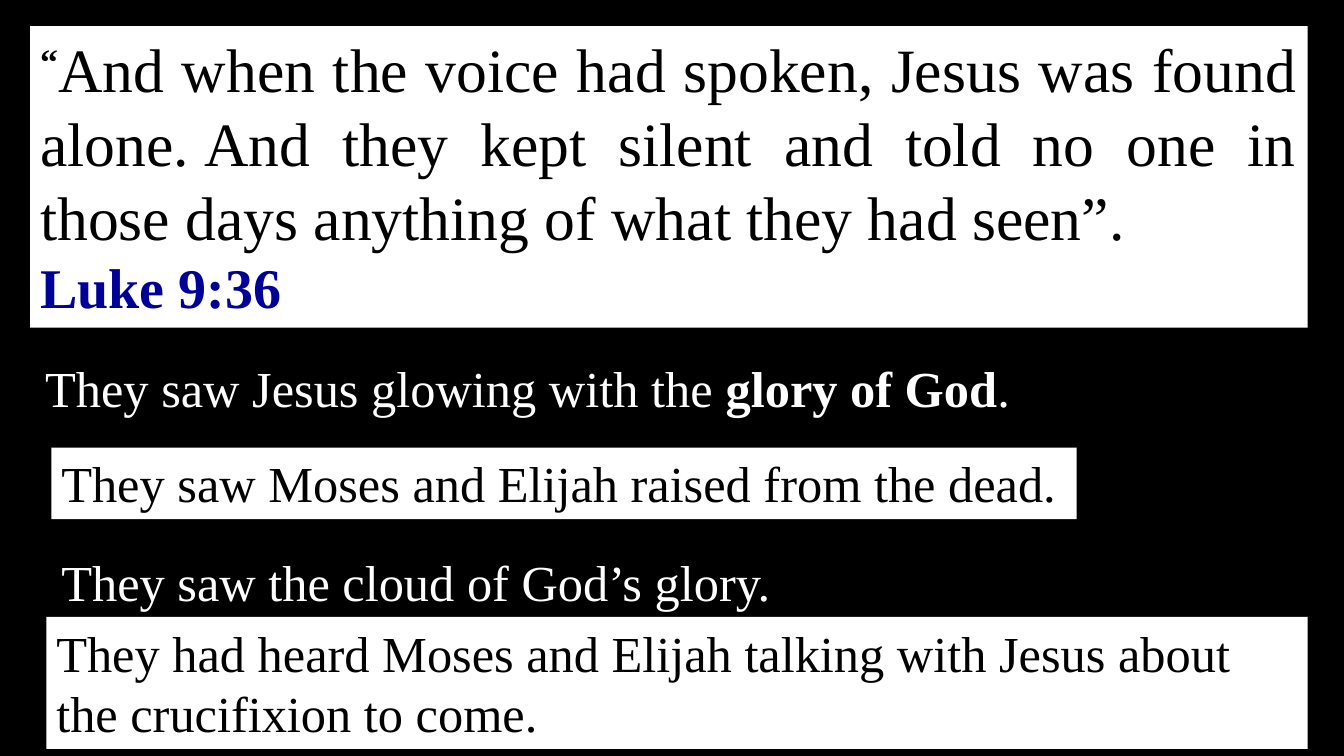
"""Build a slide with a Bible verse and four things the disciples witnessed."""
from pptx import Presentation
from pptx.dml.color import RGBColor
from pptx.enum.text import MSO_AUTO_SIZE as AutoSize, PP_ALIGN as Align
from pptx.util import Inches, Pt

THEME = {
    "font": "Times New Roman",
    "black": RGBColor(0x00, 0x00, 0x00),
    "white": RGBColor(0xFF, 0xFF, 0xFF),
    "navy": RGBColor(0x00, 0x00, 0x99),
    "verse": Pt(44),
    "reference": Pt(40),
    "point": Pt(36),
}

VERSE = [
    [
        ("“", {"size": "verse", "color": "black", "bold": True, "raised": True}),
        ("And when the voice had spoken, Jesus was found alone.\u00a0And they kept silent "
         "and told no one in those days anything of what they had seen”. ",
         {"size": "verse", "color": "black"}),
    ],
    [("Luke 9:36", {"size": "reference", "color": "navy", "bold": True})],
]
ON_BLACK = {"size": "point", "color": "white"}
ON_WHITE = {"size": "point", "color": "black"}
GLORY = [[
    ("They saw Jesus glowing with the ", ON_BLACK),
    ("glory of God", {**ON_BLACK, "bold": True}),
    (".", ON_BLACK),
]]
RAISED = [[("They saw Moses and Elijah raised from the dead.", ON_WHITE)]]
CLOUD = [[("They saw the cloud of God’s glory.", ON_BLACK)]]
CRUCIFIXION = [[("They had heard Moses and Elijah talking with Jesus about "
                 "the crucifixion to come.", ON_WHITE)]]

BOXES = [
    {"at": (0.3, 0.26, 12.67, 2.99), "text": VERSE, "panel": True, "wrap": True,
     "align": Align.JUSTIFY},
    {"at": (0.35, 3.49, 9.86, 0.71), "text": GLORY},
    {"at": (0.51, 4.44, 10.17, 0.71), "text": RAISED, "panel": True},
    {"at": (0.51, 5.42, 7.31, 0.71), "text": CLOUD},
    {"at": (0.46, 6.12, 12.51, 1.31), "text": CRUCIFIXION, "panel": True, "wrap": True},
]


def add_span(para, text, style):
    """Add one run of styled text to a paragraph."""
    span = para.add_run()
    span.text = text
    values = {"name": THEME["font"], "size": THEME[style["size"]],
              "bold": style.get("bold", False)}
    for name, value in values.items():
        setattr(span.font, name, value)
    span.font.color.rgb = THEME[style["color"]]
    if style.get("raised"):
        span.font._element.set("baseline", "30000")


def add_box(page, content):
    """Add one text box, on a white panel where asked."""
    box = page.shapes.add_textbox(*map(Inches, content["at"]))
    if content.get("panel"):
        box.fill.solid()
        box.fill.fore_color.rgb = THEME["white"]
    frame = box.text_frame
    values = {"word_wrap": content.get("wrap", False),
              "auto_size": AutoSize.SHAPE_TO_FIT_TEXT}
    for name, value in values.items():
        setattr(frame, name, value)
    for index, spans in enumerate(content["text"]):
        para = frame.add_paragraph() if index else frame.paragraphs[0]
        para.alignment = content.get("align", Align.LEFT)
        for text, style in spans:
            add_span(para, text, style)


def main():
    """Build and save the deck."""
    deck = Presentation()
    deck.slide_width, deck.slide_height = Inches(13.33), Inches(7.5)
    page = deck.slides.add_slide(deck.slide_layouts[6])
    page.background.fill.solid()
    page.background.fill.fore_color.rgb = THEME["black"]
    for content in BOXES:
        add_box(page, content)
    deck.save("out.pptx")


if __name__ == "__main__":
    main()
